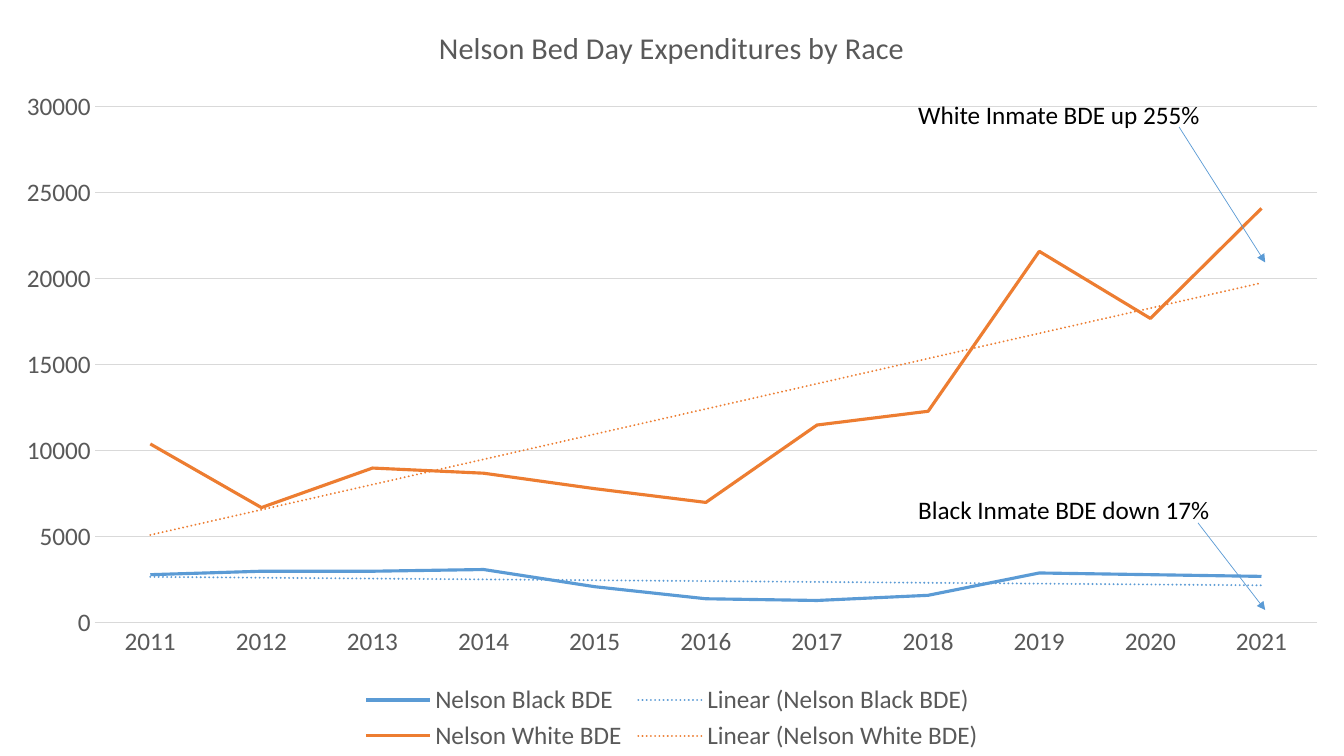
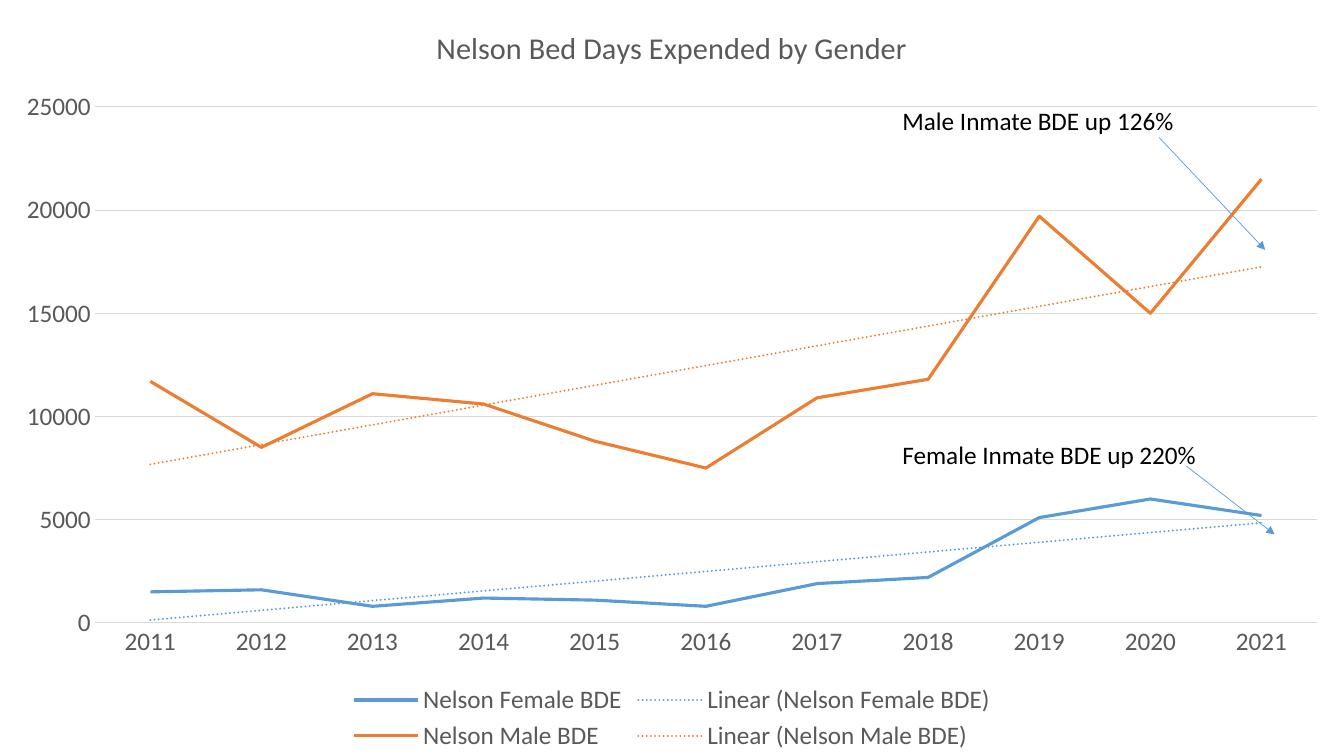
import pptx
import pptx.chart.data
import pptx.dml.color
import pptx.enum.chart
import pptx.enum.dml
import pptx.enum.shapes
import pptx.enum.text
import pptx.oxml
import pptx.oxml.ns
import pptx.util

EMU_PER_PX = 9525
SLIDE_WIDTH, SLIDE_HEIGHT = 1280, 720
FONT = "Calibri"
BLUE, ORANGE = "5B9BD5", "ED7D31"
GRID, GREY, BLACK = "D9D9D9", "595959", "000000"
BODY_SIZE, TITLE_SIZE = 18, 21.6
CALLOUT_HEIGHT = 38
YEARS = [str(year) for year in range(2011, 2022)]

TRENDLINE_XML = """<c:trendline {namespaces}>
  <c:spPr><a:ln w="19050" cap="rnd">
    <a:solidFill><a:srgbClr val="{colour}"/></a:solidFill><a:prstDash val="sysDot"/>
  </a:ln></c:spPr>
  <c:trendlineType val="linear"/><c:dispRSqr val="0"/><c:dispEq val="0"/>
</c:trendline>"""

# Each callout: text, (left, top, width), arrow start, arrow end.
SLIDES = [
    {
        "title": "Nelson Bed Day Expenditures by Race",
        "series": {
            "Nelson Black BDE": [2800, 3000, 3000, 3100, 2100, 1400,
                                 1300, 1600, 2900, 2800, 2700],
            "Nelson White BDE": [10400, 6700, 9000, 8700, 7800, 7000,
                                 11500, 12300, 21600, 17700, 24100],
        },
        "callouts": [
            ("Black Inmate BDE down 17%", (865, 466, 300), (1141, 498), (1205, 581)),
            ("White Inmate BDE up 255%", (865, 90, 291), (1123, 121), (1205, 250)),
        ],
    },
    {
        "title": "Nelson Bed Days Expended by Gender",
        "series": {
            "Nelson Female BDE": [1500, 1600, 800, 1200, 1100, 800,
                                  1900, 2200, 5100, 6000, 5200],
            "Nelson Male BDE": [11700, 8500, 11100, 10600, 8800, 7500,
                                10900, 11800, 19700, 15000, 21500],
        },
        "callouts": [
            ("Male Inmate BDE up 126%", (850, 96, 280), (1104, 131), (1205, 238)),
            ("Female Inmate BDE up 220%", (850, 414, 302), (1130, 444), (1214, 509)),
        ],
    },
]


def px(*lengths):
    return [pptx.util.Emu(length * EMU_PER_PX) for length in lengths]


def rgb(colour):
    return pptx.dml.color.RGBColor.from_string(colour)


def set_attributes(target, values):
    for name, value in values.items():
        setattr(target, name, value)


def format_font(font, colour, size=BODY_SIZE):
    set_attributes(font, {"name": FONT, "size": pptx.util.Pt(size), "bold": False})
    font.color.rgb = rgb(colour)


def format_line(line, colour, width):
    line.color.rgb = rgb(colour)
    line.width = pptx.util.Pt(width)


def add_trendline(series, colour):
    """Put a dotted linear trend line before the categories, as the schema requires."""
    namespaces = pptx.oxml.ns.nsdecls("c", "a")
    trendline = pptx.oxml.parse_xml(
        TRENDLINE_XML.format(namespaces=namespaces, colour=colour))
    series._element.find(pptx.oxml.ns.qn("c:cat")).addprevious(trendline)


def format_axes(chart):
    for axis in (chart.category_axis, chart.value_axis):
        set_attributes(axis, {
            "major_tick_mark": pptx.enum.chart.XL_TICK_MARK.NONE,
            "minor_tick_mark": pptx.enum.chart.XL_TICK_MARK.NONE,
        })
        format_font(axis.tick_labels.font, GREY)
    format_line(chart.category_axis.format.line, GRID, 0.75)
    chart.value_axis.format.line.fill.background()
    format_line(chart.value_axis.major_gridlines.format.line, GRID, 0.75)


def add_trend_chart(slide, title, series_values):
    data = pptx.chart.data.CategoryChartData(number_format="General")
    data.categories = YEARS
    for name, values in series_values.items():
        data.add_series(name, values)
    chart = slide.shapes.add_chart(
        pptx.enum.chart.XL_CHART_TYPE.LINE,
        *px(0, 0, SLIDE_WIDTH, SLIDE_HEIGHT), data).chart
    format_font(chart.font, BLACK)
    chart.plots[0].vary_by_categories = False

    chart.has_title = True
    title_frame = chart.chart_title.text_frame
    title_frame.text = title
    format_font(title_frame.paragraphs[0].runs[0].font, GREY, TITLE_SIZE)

    chart.has_legend = True
    set_attributes(chart.legend, {
        "position": pptx.enum.chart.XL_LEGEND_POSITION.BOTTOM,
        "include_in_layout": False,
    })
    format_font(chart.legend.font, GREY)
    format_axes(chart)

    for series, colour in zip(chart.plots[0].series, (BLUE, ORANGE)):
        series.smooth = False
        series.marker.style = pptx.enum.chart.XL_MARKER_STYLE.NONE
        format_line(series.format.line, colour, 2.25)
        add_trendline(series, colour)


def add_arrow(slide, start, end):
    connector = slide.shapes.add_connector(
        pptx.enum.shapes.MSO_CONNECTOR.STRAIGHT, *px(*start, *end))
    format_line(connector.line, BLUE, 0.5)
    line = connector.line._get_or_add_ln()
    pptx.oxml.ns.qn("a:tailEnd")
    line.append(pptx.oxml.parse_xml(
        f'<a:tailEnd {pptx.oxml.ns.nsdecls("a")} type="triangle"/>'))
    line.addnext(pptx.oxml.parse_xml(f'<a:effectLst {pptx.oxml.ns.nsdecls("a")}/>'))


def add_callout(slide, text, box, start, end):
    """Add a label and the arrow that leads from it to its trend."""
    text_box = slide.shapes.add_textbox(*px(*box, CALLOUT_HEIGHT))
    frame = text_box.text_frame
    set_attributes(frame, {
        "word_wrap": False,
        "auto_size": pptx.enum.text.MSO_AUTO_SIZE.SHAPE_TO_FIT_TEXT,
        "text": text,
    })
    format_font(frame.paragraphs[0].runs[0].font, BLACK)
    add_arrow(slide, start, end)


def main():
    presentation = pptx.Presentation()
    width, height = px(SLIDE_WIDTH, SLIDE_HEIGHT)
    set_attributes(presentation, {"slide_width": width, "slide_height": height})
    blank_layout = presentation.slide_layouts[6]
    for content in SLIDES:
        slide = presentation.slides.add_slide(blank_layout)
        add_trend_chart(slide, content["title"], content["series"])
        for callout in content["callouts"]:
            add_callout(slide, *callout)
    presentation.save("out.pptx")


if __name__ == "__main__":
    main()
